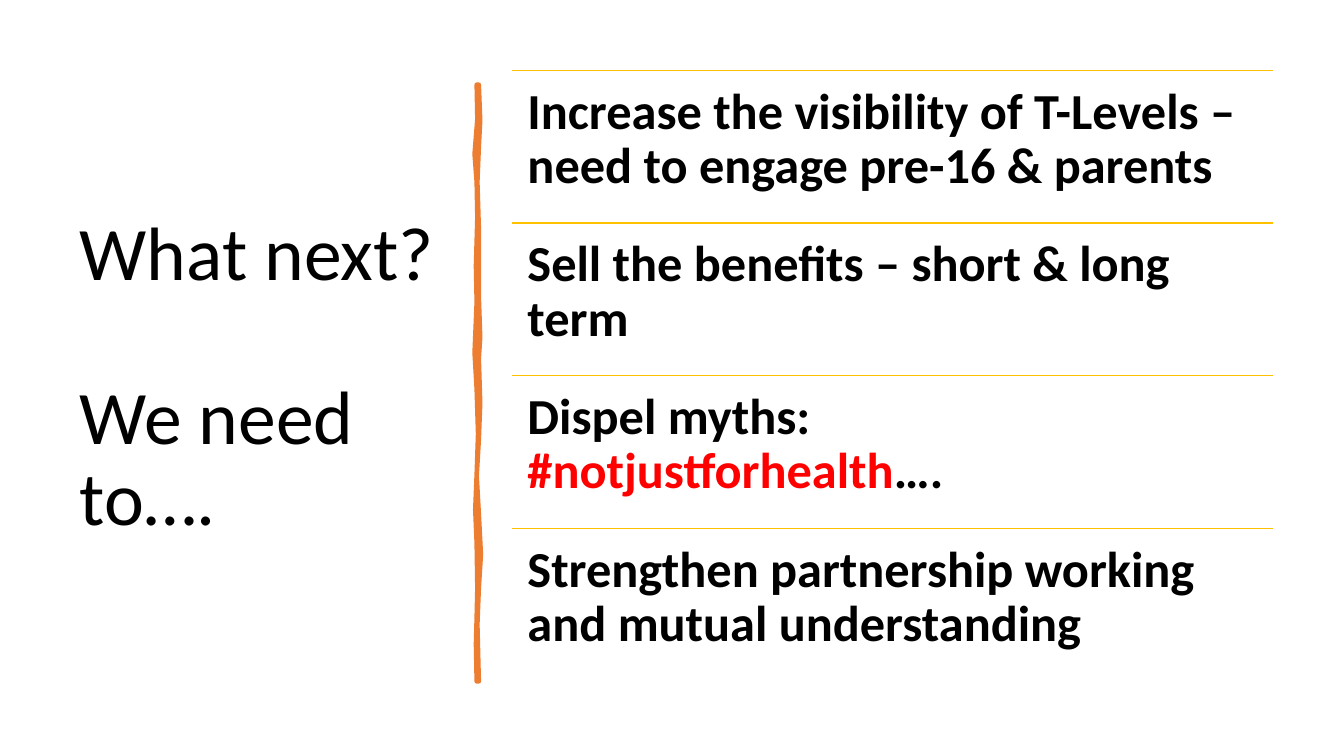
"""Build the "What next?" slide: a title, a brush-stroke divider and four ruled actions."""
from dataclasses import dataclass

from lxml import etree
from pptx import Presentation
from pptx.dml.color import RGBColor
from pptx.enum.shapes import MSO_CONNECTOR
from pptx.enum.text import MSO_ANCHOR, MSO_AUTO_SIZE, PP_ALIGN
from pptx.oxml.ns import qn
from pptx.util import Pt

STRAIGHT = MSO_CONNECTOR.STRAIGHT
TOP, MIDDLE = MSO_ANCHOR.TOP, MSO_ANCHOR.MIDDLE
LEFT = PP_ALIGN.LEFT
NO_FIT = MSO_AUTO_SIZE.NONE

BLACK, RED, ORANGE, GOLD = "000000", "FF0000", "ED7D31", "FFC000"
TITLE_FONT = {"name": "Calibri", "size": Pt(54), "bold": False}
ACTION_FONT = {"name": "Calibri", "size": Pt(36), "bold": True}
PARAGRAPH = {"alignment": LEFT, "line_spacing": 0.9, "space_before": Pt(0)}
TITLE_GAP = 59
ACTION_LEFT, ACTION_TOP, ACTION_WIDTH, ACTION_PITCH = 366, 50.4, 543.4, 109
ACTION_INSET = 10.8

STROKE_RIGHT = [(342, 60.5), (343, 86), (342, 105), (341, 130), (342, 163),
                (342, 212), (343, 241), (342, 256), (343, 288), (342, 314),
                (340.5, 340), (342, 367), (343.5, 396), (342, 420), (341, 446),
                (342, 486.7)]
STROKE_LEFT = [(340.5, 486.7), (340, 460), (340.5, 441), (341, 420), (340.5, 388),
               (339.5, 364), (340.5, 339), (341.5, 310), (340.5, 278), (339, 252),
               (340.5, 216), (340, 190), (341, 155), (340.5, 130), (339, 110),
               (341, 85), (340.5, 60.5)]


@dataclass
class Span:
    text: str
    color: str = BLACK


@dataclass
class Action:
    spans: list[Span]


ACTIONS = [
    Action([Span("Increase the visibility of T-Levels – need to engage pre-16 & parents")]),
    Action([Span("Sell the benefits – short & long term")]),
    Action([Span("Dispel myths:\v"), Span("#notjustforhealth", RED), Span("….")]),
    Action([Span("Strengthen partnership working and mutual understanding")]),
]


def rgb(color: str) -> RGBColor:
    return RGBColor.from_string(color)


def apply(target, values: dict) -> None:
    for name, value in values.items():
        setattr(target, name, value)


def write(paragraph, spans: list[Span], font: dict) -> None:
    apply(paragraph, PARAGRAPH)
    for span in spans:
        if span.text.endswith("\v"):
            run = paragraph.add_run()
            run.text = span.text.rstrip("\v")
            paragraph.add_line_break()
        else:
            run = paragraph.add_run()
            run.text = span.text
        apply(run.font, font)
        run.font.color.rgb = rgb(span.color)


def add_title(slide) -> None:
    title = slide.shapes.title
    apply(title, {"left": Pt(49.7), "top": Pt(50.4), "width": Pt(269.3), "height": Pt(440)})
    frame = title.text_frame
    apply(frame, {"word_wrap": True, "auto_size": NO_FIT, "vertical_anchor": MIDDLE})
    write(frame.paragraphs[0], [Span("What next?")], TITLE_FONT)
    prompt = frame.add_paragraph()
    write(prompt, [Span("We need to….")], TITLE_FONT)
    prompt.space_before = Pt(TITLE_GAP)


def add_divider(slide) -> None:
    outline = [(Pt(x), Pt(y)) for x, y in STROKE_RIGHT + STROKE_LEFT]
    builder = slide.shapes.build_freeform(*outline[0])
    builder.add_line_segments(outline[1:], close=True)
    stroke = builder.convert_to_shape()
    stroke.shadow.inherit = False
    stroke.fill.solid()
    stroke.fill.fore_color.rgb = rgb(ORANGE)
    stroke.line.color.rgb = rgb(ORANGE)
    stroke.line.width = Pt(3.25)


def add_action(slide, action: Action, top: float) -> None:
    rule = slide.shapes.add_connector(
        STRAIGHT, Pt(ACTION_LEFT), Pt(top), Pt(ACTION_LEFT + ACTION_WIDTH), Pt(top))
    rule.line.color.rgb = rgb(GOLD)
    rule.line.width = Pt(1)
    etree.SubElement(rule._element.spPr, qn("a:effectLst"))

    box = slide.shapes.add_textbox(
        Pt(ACTION_LEFT), Pt(top), Pt(ACTION_WIDTH), Pt(ACTION_PITCH))
    frame = box.text_frame
    apply(frame, {"word_wrap": True, "auto_size": NO_FIT, "vertical_anchor": TOP})
    apply(frame, {f"margin_{side}": Pt(ACTION_INSET)
                  for side in ("left", "top", "right", "bottom")})
    write(frame.paragraphs[0], action.spans, ACTION_FONT)


def main() -> None:
    deck = Presentation()
    apply(deck, {"slide_width": Pt(960), "slide_height": Pt(540)})
    slide = deck.slides.add_slide(deck.slide_layouts.get_by_name("Title Only"))
    add_title(slide)
    add_divider(slide)
    for row, action in enumerate(ACTIONS):
        add_action(slide, action, ACTION_TOP + row * ACTION_PITCH)
    deck.save("out.pptx")


if __name__ == "__main__":
    main()
